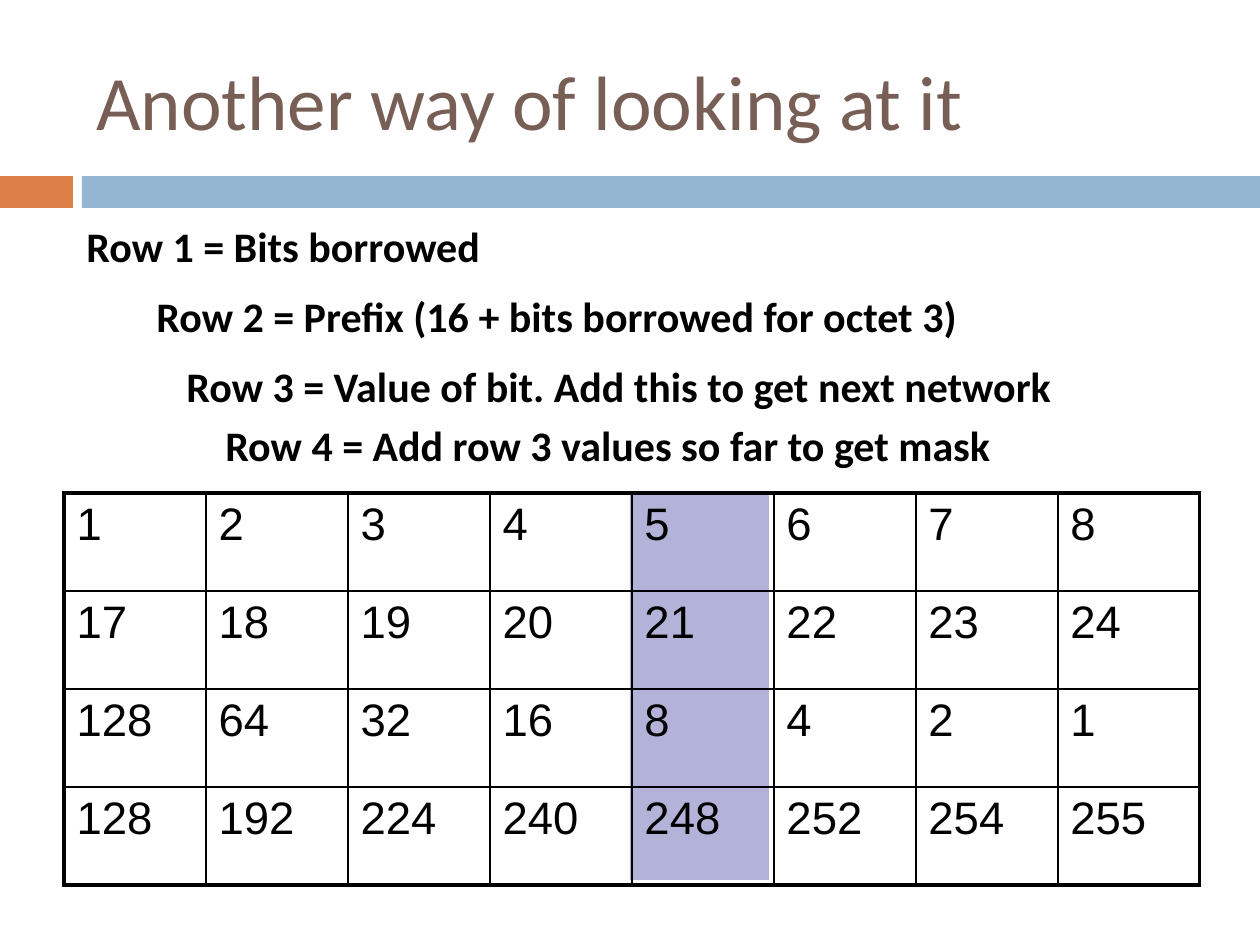
from dataclasses import dataclass

from lxml.etree import SubElement
from pptx import Presentation
from pptx.dml.color import RGBColor
from pptx.enum.shapes import MSO_SHAPE
from pptx.enum.text import MSO_ANCHOR
from pptx.oxml.ns import qn
from pptx.util import Emu, Pt

PX_PER_INCH = 126


def px(n):
    return Emu(round(n * 914400 / PX_PER_INCH))


@dataclass(frozen=True)
class Theme:
    orange: str = "DD8047"
    blue: str = "94B6D2"
    lilac: str = "B3B3D9"
    brown: str = "775F55"
    black: str = "000000"
    text_font: str = "Calibri"
    table_font: str = "Arial"
    title_size: int = 44
    note_size: int = 24
    table_size: int = 26
    outer_line: float = 2.25
    inner_line: float = 1


class SlideBuilder:
    def __init__(self, slide, theme):
        self.s = slide
        self.theme = theme

    def bar(self, x, y, w, h, color):
        sp = self.s.shapes.add_shape(MSO_SHAPE.RECTANGLE, px(x), px(y), px(w), px(h))
        sp.shadow.inherit = False
        sp.fill.solid()
        sp.fill.fore_color.rgb = RGBColor.from_string(color)
        sp.line.fill.background()

    def add_run(self, tf, text, color, **formats):
        r = tf.paragraphs[0].add_run()
        r.text = text
        for name, value in formats.items():
            setattr(r.font, name, value)
        r.font.color.rgb = RGBColor.from_string(color)

    def text(self, x, y, w, h, text, color, anchor=MSO_ANCHOR.TOP, **formats):
        tf = self.s.shapes.add_textbox(px(x), px(y), px(w), px(h)).text_frame
        tf.word_wrap = True
        tf.vertical_anchor = anchor
        self.add_run(tf, text, color, **formats)

    def border(self, cell, side, width):
        ln = SubElement(cell._tc.get_or_add_tcPr(), qn(f"a:ln{side}"), w=str(Pt(width)))
        fill = SubElement(ln, qn("a:solidFill"))
        SubElement(fill, qn("a:srgbClr"), val=self.theme.black)

    def table(self, x, y, col_w, row_h, rows):
        t = self.theme
        n_rows, n_cols = len(rows), len(rows[0])
        table = self.s.shapes.add_table(
            n_rows, n_cols, px(x), px(y), px(col_w * n_cols), px(row_h * n_rows)
        ).table
        table.first_row = table.horz_banding = False
        for col in table.columns:
            col.width = px(col_w)
        for i, values in enumerate(rows):
            table.rows[i].height = px(row_h)
            for j, value in enumerate(values):
                cell = table.cell(i, j)
                on_edge = {"L": j == 0, "R": j == n_cols - 1,
                           "T": i == 0, "B": i == n_rows - 1}
                for side, outer in on_edge.items():
                    self.border(cell, side, t.outer_line if outer else t.inner_line)
                cell.fill.background()
                self.add_run(cell.text_frame, str(value), t.black,
                             name=t.table_font, size=Pt(t.table_size))


def main():
    prs = Presentation()
    prs.slide_width, prs.slide_height = px(1260), px(945)
    theme = Theme()
    b = SlideBuilder(prs.slides.add_slide(prs.slide_layouts[6]), theme)

    # Title band
    b.bar(0, 176, 73, 32, theme.orange)
    b.bar(82, 176, 1178, 32, theme.blue)

    # Highlight behind the fifth column
    b.bar(630, 493, 139, 387, theme.lilac)

    # Title
    b.text(84, 32, 1124, 136, "Another way of looking at it", theme.brown,
           MSO_ANCHOR.MIDDLE, name=theme.text_font, size=Pt(theme.title_size))

    # Subnet table: bits borrowed, prefix, bit value, mask
    bits = range(1, 9)
    values = [2 ** (8 - n) for n in bits]
    b.table(64, 493, 142, 98, [
        list(bits),
        [16 + n for n in bits],
        values,
        [256 - v for v in values],
    ])

    # Row explanations
    notes = [
        (74, 214, 635, "Row 1 = Bits borrowed"),
        (144, 284, 1002, "Row 2 = Prefix (16 + bits borrowed for octet 3)"),
        (174, 354, 1042, "Row 3 = Value of bit. Add this to get next network"),
        (213, 413, 948, "Row 4 = Add row 3 values so far to get mask"),
    ]
    for x, y, w, note in notes:
        b.text(x, y, w, 63, note, theme.black,
               name=theme.text_font, size=Pt(theme.note_size), bold=True)

    prs.save("out.pptx")


if __name__ == "__main__":
    main()
